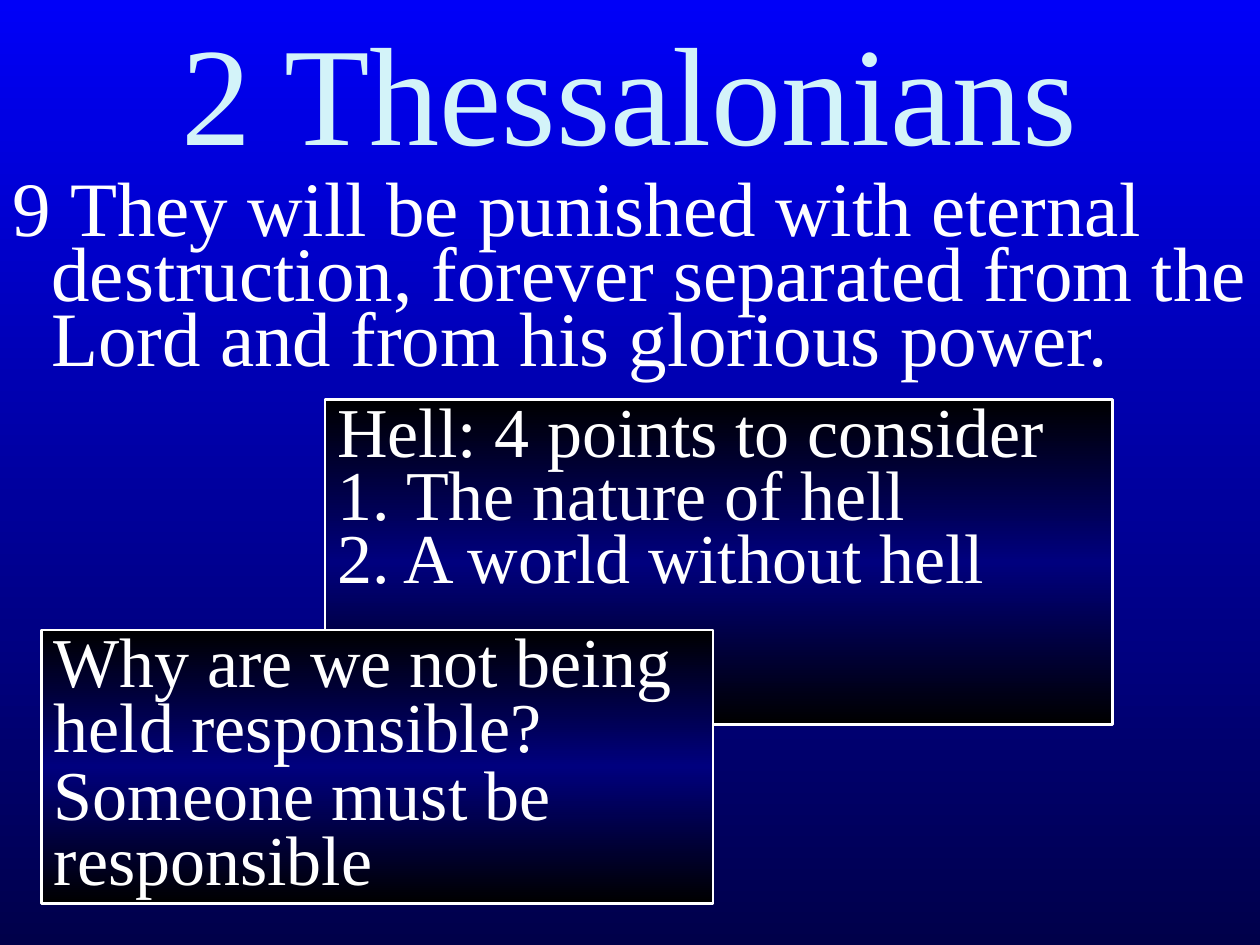
from copy import deepcopy

from pptx import Presentation
from pptx.dml.color import RGBColor
from pptx.enum.shapes import MSO_SHAPE
from pptx.enum.text import MSO_ANCHOR, PP_ALIGN
from pptx.util import Inches, Pt

RECT = MSO_SHAPE.RECTANGLE
TOP, MIDDLE = MSO_ANCHOR.TOP, MSO_ANCHOR.MIDDLE
LEFT, CENTER = PP_ALIGN.LEFT, PP_ALIGN.CENTER

WHITE = RGBColor(0xFF, 0xFF, 0xFF)
BLACK = RGBColor(0x00, 0x00, 0x00)
PALE = RGBColor(0xD3, 0xF3, 0xF9)
NAVY = RGBColor(0x00, 0x00, 0x7E)
BRIGHT = RGBColor(0x00, 0x00, 0xF8)
DEEP = RGBColor(0x00, 0x00, 0x4A)
FONT = "Times New Roman"

TITLE = "2 Thessalonians"
VERSE = ("9\u00a0They will be punished with eternal destruction, "
         "forever separated from the Lord and from his glorious power.")

# Panels: place, then lines of text with their line spacing
PANELS = [
    ((2.58, 3.17, 6.25, 2.58), [
        ("Hell: 4 points to consider", 0.77),
        ("1. The nature of hell", 0.7),
        ("2. A world without hell", 0.7),
    ]),
    ((0.33, 5, 5.33, 2.17), [
        ("Why are we not being held responsible?", 0.77),
        ("Someone must be responsible", 0.77),
    ]),
]


def shade(fill, colors):
    """Fill from top to bottom with evenly spaced colours."""
    fill.gradient()
    fill.gradient_angle = 270
    first = fill.gradient_stops[0]._gs
    for _ in colors[2:]:
        first.addnext(deepcopy(first))
    for i, (stop, color) in enumerate(zip(fill.gradient_stops, colors)):
        stop.position = i / (len(colors) - 1)
        stop.color.rgb = color


def write(shape, lines, size=40, color=WHITE, align=LEFT, anchor=TOP, hang=0):
    frame = shape.text_frame
    frame.word_wrap = True
    frame.vertical_anchor = anchor
    for i, (text, gap) in enumerate(lines):
        para = frame.add_paragraph() if i else frame.paragraphs[0]
        para.alignment = align
        para.line_spacing = gap
        para.space_before = Pt(size * 0.05 if i else 0)
        if hang:
            props = para._p.get_or_add_pPr()
            props.set("marL", str(Inches(hang)))
            props.set("indent", str(-Inches(hang)))
        run = para.add_run()
        run.text = text
        run.font.name = FONT
        run.font.size = Pt(size)
        run.font.color.rgb = color


def place(box):
    return [Inches(n) for n in box]


prs = Presentation()
prs.slide_width, prs.slide_height = Inches(10), Inches(7.5)
slide = prs.slides.add_slide(prs.slide_layouts[6])
shade(slide.background.fill, [BRIGHT, DEEP])

title = slide.shapes.add_textbox(*place((0, 0, 10, 1.67)))
write(title, [(TITLE, 0.8)], size=80, color=PALE, align=CENTER, anchor=MIDDLE)

verse = slide.shapes.add_textbox(*place((0, 1.42, 10, 5.33)))
write(verse, [(VERSE, 0.7)], size=44, hang=0.31)

for box, lines in PANELS:
    panel = slide.shapes.add_shape(RECT, *place(box))
    panel.shadow.inherit = False
    shade(panel.fill, [BLACK, NAVY, BLACK])
    panel.line.color.rgb = WHITE
    panel.line.width = Pt(1.5)
    write(panel, lines)

prs.save("out.pptx")
